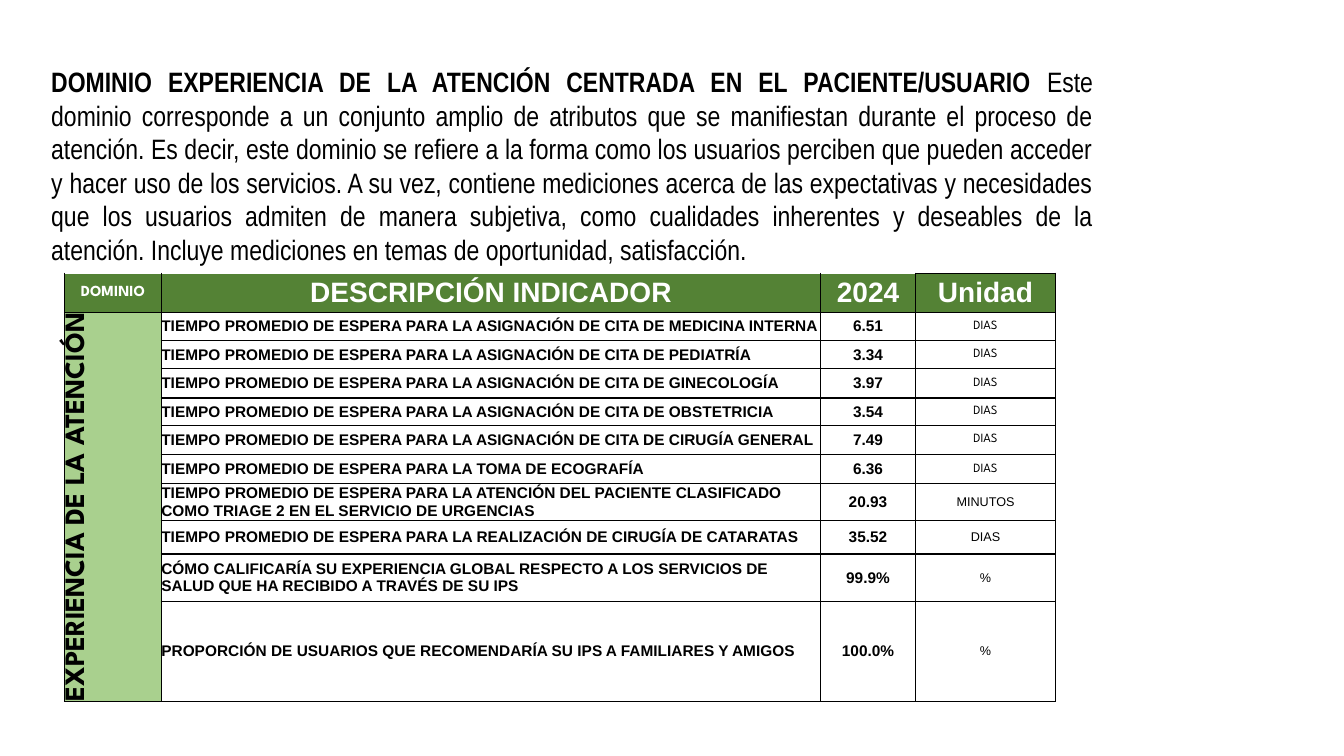
from dataclasses import dataclass

from lxml.etree import SubElement
from pptx import Presentation
from pptx.dml.color import RGBColor
from pptx.enum.text import MSO_ANCHOR, MSO_AUTO_SIZE, PP_ALIGN
from pptx.oxml.ns import qn
from pptx.util import Inches, Pt


@dataclass(frozen=True)
class Theme:
    black: str = "000000"
    white: str = "FFFFFF"
    header_green: str = "548235"
    domain_green: str = "A9D08E"
    intro_font: str = "Arial Narrow"
    body_font: str = "Arial"
    accent_font: str = "League Spartan"
    large: int = 20
    body: int = 11
    small: int = 9
    border: int = 1


THEME = Theme()
INTRO_TITLE = "DOMINIO EXPERIENCIA DE LA ATENCIÓN CENTRADA EN EL PACIENTE/USUARIO "
INTRO_BODY = (
    "Este dominio corresponde a un conjunto amplio de atributos que se manifiestan "
    "durante el proceso de atención. Es decir, este dominio se refiere a la forma como "
    "los usuarios perciben que pueden acceder y hacer uso de los servicios. A su vez, "
    "contiene mediciones acerca de las expectativas y necesidades que los usuarios "
    "admiten de manera subjetiva, como cualidades inherentes y deseables de la atención. "
    "Incluye mediciones en temas de oportunidad, satisfacción."
)
WAIT = "TIEMPO PROMEDIO DE ESPERA PARA LA "
APPOINTMENT = WAIT + "ASIGNACIÓN DE CITA DE "
INDICATORS = [
    (APPOINTMENT + "MEDICINA INTERNA", "6.51", "DIAS"),
    (APPOINTMENT + "PEDIATRÍA", "3.34", "DIAS"),
    (APPOINTMENT + "GINECOLOGÍA", "3.97", "DIAS"),
    (APPOINTMENT + "OBSTETRICIA", "3.54", "DIAS"),
    (APPOINTMENT + "CIRUGÍA GENERAL", "7.49", "DIAS"),
    (WAIT + "TOMA DE ECOGRAFÍA", "6.36", "DIAS"),
    (WAIT + "ATENCIÓN DEL PACIENTE CLASIFICADO COMO TRIAGE 2 EN EL SERVICIO DE URGENCIAS",
     "20.93", "MINUTOS"),
    (WAIT + "REALIZACIÓN DE CIRUGÍA DE CATARATAS", "35.52", "DIAS"),
    ("CÓMO CALIFICARÍA SU EXPERIENCIA GLOBAL RESPECTO A LOS SERVICIOS DE SALUD "
     "QUE HA RECIBIDO A TRAVÉS DE SU IPS", "99.9%", "%"),
    ("PROPORCIÓN DE USUARIOS QUE RECOMENDARÍA SU IPS A FAMILIARES Y AMIGOS", "100.0%", "%"),
]
ACCENT_UNIT_ROWS = 6
COLUMN_WIDTHS = [0.96, 6.54, 0.94, 1.39]
ROW_HEIGHTS = [0.39, 0.28, 0.28, 0.29, 0.27, 0.29, 0.29, 0.32, 0.33, 0.47, 0.28]


def add_span(para, text, *, size, font, color=THEME.black, bold=False):
    span = para.add_run()
    span.text = text
    span.font.size = Pt(size)
    span.font.name = font
    span.font.bold = bold
    span.font.color.rgb = RGBColor.from_string(color)


class SlideBuilder:
    def __init__(self, page, theme):
        self.page = page
        self.theme = theme

    def intro(self, left, top, width, height):
        box = self.page.shapes.add_textbox(*map(Inches, (left, top, width, height)))
        frame = box.text_frame
        frame.word_wrap = True
        frame.auto_size = MSO_AUTO_SIZE.SHAPE_TO_FIT_TEXT
        para = frame.paragraphs[0]
        para.alignment = PP_ALIGN.JUSTIFY
        style = {"size": self.theme.large, "font": self.theme.intro_font}
        add_span(para, INTRO_TITLE, bold=True, **style)
        add_span(para, INTRO_BODY, **style)

    def table(self, left, top):
        size = sum(COLUMN_WIDTHS), sum(ROW_HEIGHTS)
        frame = self.page.shapes.add_table(
            len(ROW_HEIGHTS), len(COLUMN_WIDTHS), *map(Inches, (left, top, *size)))
        table = frame.table
        table.first_row = table.horz_banding = False
        for column, width in zip(table.columns, COLUMN_WIDTHS):
            column.width = Inches(width)
        for row, height in zip(table.rows, ROW_HEIGHTS):
            row.height = Inches(height)
        return table

    def cell(self, cell, fill, sides="LRTB"):
        """Set fill, margins, anchor and the borders named in sides."""
        cell.margin_left = cell.margin_right = cell.margin_top = cell.margin_bottom = 0
        cell.vertical_anchor = MSO_ANCHOR.MIDDLE
        properties = cell._tc.get_or_add_tcPr()
        for side in sides:
            line = SubElement(properties, qn(f"a:ln{side}"), w=str(Pt(self.theme.border)))
            solid = SubElement(line, qn("a:solidFill"))
            SubElement(solid, qn("a:srgbClr"), val=self.theme.black)
        cell.fill.solid()
        cell.fill.fore_color.rgb = RGBColor.from_string(fill)

    def cell_text(self, cell, text, align=PP_ALIGN.CENTER, **style):
        para = cell.text_frame.paragraphs[0]
        para.alignment = align
        add_span(para, text, **style)

    def header(self, table):
        theme = self.theme
        for index, text in enumerate(["DOMINIO", "DESCRIPCIÓN INDICADOR", "2024", "Unidad"]):
            cell = table.cell(0, index)
            self.cell(cell, theme.header_green, "LRTB" if text == "Unidad" else "LRB")
            first = index == 0
            self.cell_text(cell, text, bold=True, color=theme.white,
                           size=theme.body if first else theme.large,
                           font=theme.accent_font if first else theme.body_font)

    def domain(self, table):
        theme = self.theme
        last = len(INDICATORS)
        for row in range(1, last + 1):
            self.cell(table.cell(row, 0), theme.domain_green)
        cell = table.cell(1, 0)
        cell.merge(table.cell(last, 0))
        cell._tc.get_or_add_tcPr().set("vert", "vert270")
        self.cell_text(cell, "EXPERIENCIA DE LA ATENCIÓN", bold=True,
                       size=theme.large, font=theme.accent_font)

    def indicators(self, table):
        theme = self.theme
        strong = {"size": theme.body, "font": theme.body_font, "bold": True}
        for row, (description, value, unit) in enumerate(INDICATORS, start=1):
            for column in range(1, len(COLUMN_WIDTHS)):
                self.cell(table.cell(row, column), theme.white)
            self.cell_text(table.cell(row, 1), description, PP_ALIGN.LEFT, **strong)
            self.cell_text(table.cell(row, 2), value, **strong)
            unit_font = theme.accent_font if row <= ACCENT_UNIT_ROWS else theme.body_font
            self.cell_text(table.cell(row, 3), unit, size=theme.small, font=unit_font)


def main():
    deck = Presentation()
    deck.slide_width, deck.slide_height = Inches(13.33), Inches(7.5)
    page = deck.slides.add_slide(deck.slide_layouts[6])
    builder = SlideBuilder(page, THEME)
    builder.intro(0.41, 0.59, 10.53, 2.12)
    table = builder.table(0.64, 2.71)
    builder.header(table)
    builder.domain(table)
    builder.indicators(table)
    deck.save("out.pptx")


if __name__ == "__main__":
    main()
